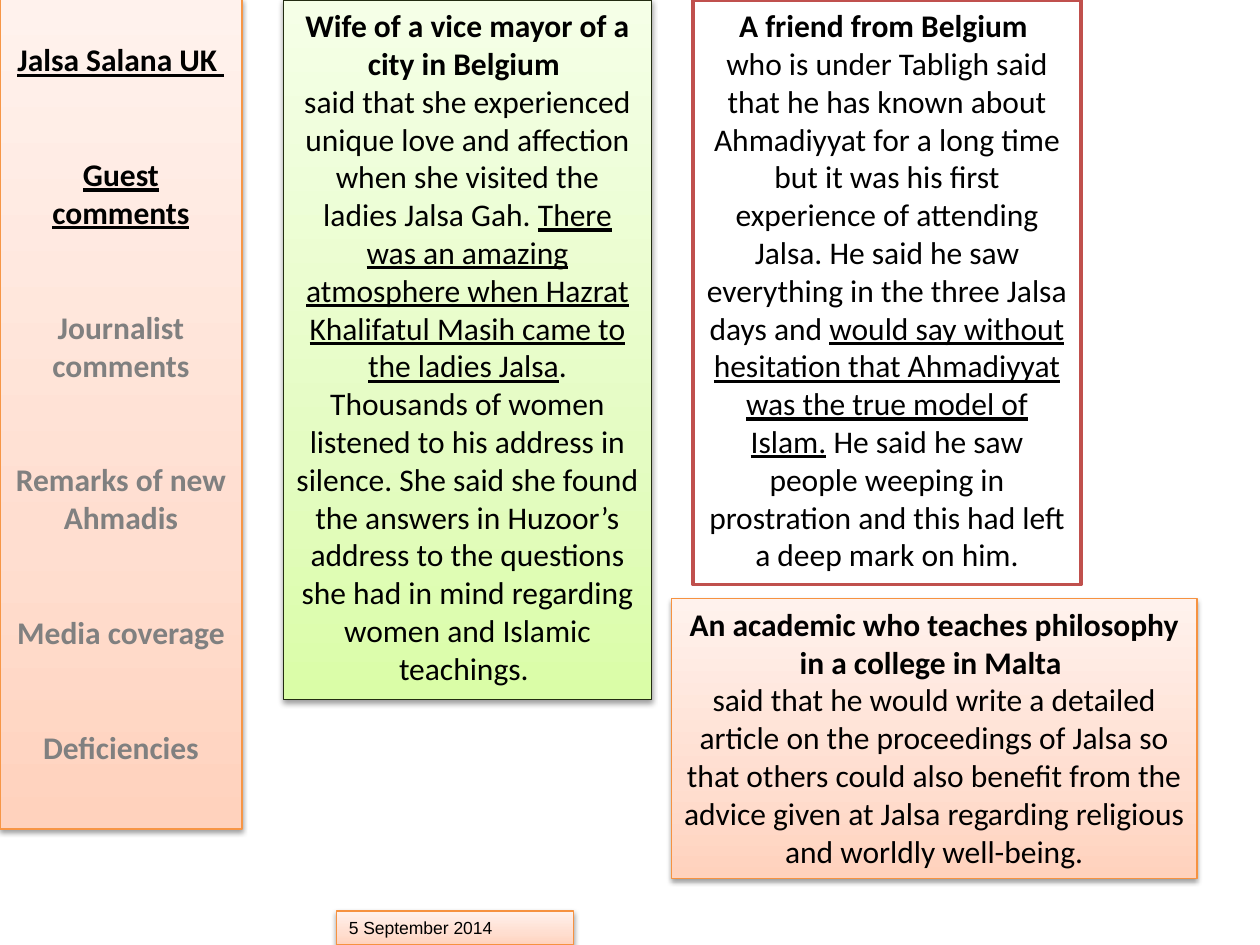
from copy import deepcopy
from dataclasses import dataclass
from typing import Optional

from lxml import etree
from pptx import Presentation
from pptx.dml.color import RGBColor
from pptx.enum import shapes, text
from pptx.oxml import ns
from pptx.util import Inches, Pt

BLACK = RGBColor(0x00, 0x00, 0x00)
WHITE = RGBColor(0xFF, 0xFF, 0xFF)
GREY = RGBColor(0x80, 0x80, 0x80)
ORANGE = RGBColor(0xF7, 0x96, 0x46)
DEEP_ORANGE = RGBColor(0xF6, 0x92, 0x40)
DARK_GREEN = RGBColor(0x23, 0x2C, 0x12)
RED = RGBColor(0xC0, 0x50, 0x4D)
PEACH = (RGBColor(0xFF, 0xD2, 0xBD), RGBColor(0xFF, 0xDE, 0xD0), RGBColor(0xFF, 0xF2, 0xED))
LIME = (RGBColor(0xDA, 0xFD, 0xA7), RGBColor(0xE4, 0xFC, 0xC2), RGBColor(0xF5, 0xFF, 0xE7))
STOPS = (0, 0.35, 1)


@dataclass
class Span:
    text: str
    bold: bool = False
    underline: bool = False
    color: RGBColor = BLACK
    size: float = 18
    font: str = "Calibri"


@dataclass
class Panel:
    left: float
    top: float
    width: float
    height: float
    line: RGBColor
    paras: list[list[Span]]
    shades: Optional[tuple[RGBColor, ...]] = None
    line_width: float = 0.75
    align: text.PP_ALIGN = text.PP_ALIGN.CENTER
    inset_top: float = 0.05
    gap: float = 0


def paint_gradient(box, shades: tuple[RGBColor, ...]) -> None:
    """Fill from bottom to top through three shades."""
    box.fill.gradient()
    box.fill.gradient_angle = 90
    stop_list = box._element.spPr.find(".//" + ns.qn("a:gsLst"))
    stop_list.append(deepcopy(stop_list[-1]))
    for stop, position, shade in zip(box.fill.gradient_stops, STOPS, shades):
        stop.position = position
        stop.color.rgb = shade


def add_shadow(box) -> None:
    effects = box._element.spPr.find(ns.qn("a:effectLst"))
    shadow = etree.SubElement(effects, ns.qn("a:outerShdw"), blurRad=str(Pt(3.1)),
                              dist=str(Pt(1.6)), dir="5400000", rotWithShape="0")
    color = etree.SubElement(shadow, ns.qn("a:srgbClr"), val=str(BLACK))
    etree.SubElement(color, ns.qn("a:alpha"), val="38000")


def draw_panel(page, panel: Panel) -> None:
    box = page.shapes.add_shape(
        shapes.MSO_SHAPE.RECTANGLE, Inches(panel.left), Inches(panel.top),
        Inches(panel.width), Inches(panel.height))
    box.shadow.inherit = False
    if panel.shades:
        paint_gradient(box, panel.shades)
        add_shadow(box)
    else:
        box.fill.solid()
        box.fill.fore_color.rgb = WHITE
    box.line.color.rgb = panel.line
    box.line.width = Pt(panel.line_width)

    frame = box.text_frame
    frame.word_wrap = True
    frame.vertical_anchor = text.MSO_ANCHOR.TOP
    frame.margin_top = Inches(panel.inset_top)
    for index, spans in enumerate(panel.paras):
        para = frame.paragraphs[0] if index == 0 else frame.add_paragraph()
        para.alignment = panel.align
        if index:
            para.space_before = Pt(panel.gap)
        for span in spans:
            run = para.add_run()
            run.text = span.text
            run.font.name = span.font
            run.font.size = Pt(span.size)
            run.font.bold = span.bold
            run.font.underline = span.underline
            run.font.color.rgb = span.color


CURRENT_TOPICS = ["Jalsa Salana UK ", "Guest comments"]
OTHER_TOPICS = ["Journalist comments", "Remarks of new Ahmadis", "Media coverage", "Deficiencies"]

PANELS = [
    Panel(0, -0.01, 1.92, 6.59, ORANGE,
          [[Span(topic, bold=True, underline=True)] for topic in CURRENT_TOPICS]
          + [[Span(topic, bold=True, color=GREY)] for topic in OTHER_TOPICS],
          shades=PEACH, inset_top=0.33, gap=44),
    Panel(2.25, 0, 2.92, 5.55, DARK_GREEN, [
        [Span("Wife of a vice mayor of a city in Belgium ", bold=True)],
        [Span("said that she experienced unique love and affection when she visited "
              "the ladies Jalsa Gah. "),
         Span("There was an amazing atmosphere when Hazrat Khalifatul Masih came to "
              "the ladies Jalsa", underline=True),
         Span(". Thousands of women listened to his address in silence. She said she "
              "found the answers in Huzoor’s address to the questions she had in mind "
              "regarding women and Islamic teachings. ")],
    ], shades=LIME),
    Panel(5.5, 0, 3.08, 4.64, RED, [
        [Span("A friend from Belgium ", bold=True)],
        [Span("who is under Tabligh said that he has known about Ahmadiyyat for a long "
              "time but it was his first experience of attending Jalsa. He said he saw "
              "everything in the three Jalsa days and "),
         Span("would say without hesitation that Ahmadiyyat was the true model of Islam.",
              underline=True),
         Span(" He said he saw people weeping in prostration and this had left a deep "
              "mark on him.")],
    ], line_width=2),
    Panel(2.67, 7.23, 1.88, 0.27, DEEP_ORANGE,
          [[Span("5 September 2014", size=10, font="Arial")]],
          shades=PEACH, align=text.PP_ALIGN.LEFT),
    Panel(5.33, 4.75, 4.17, 2.22, DEEP_ORANGE, [
        [Span("An academic who teaches philosophy in a college in Malta ", bold=True)],
        [Span("said that he would write a detailed article on the proceedings of Jalsa "
              "so that others could also benefit from the advice given at Jalsa "
              "regarding religious and worldly well-being.")],
    ], shades=PEACH),
]


def main() -> None:
    deck = Presentation()
    deck.slide_width = Inches(10)
    deck.slide_height = Inches(7.5)
    page = deck.slides.add_slide(deck.slide_layouts[6])
    for panel in PANELS:
        draw_panel(page, panel)
    deck.save("out.pptx")


if __name__ == "__main__":
    main()
